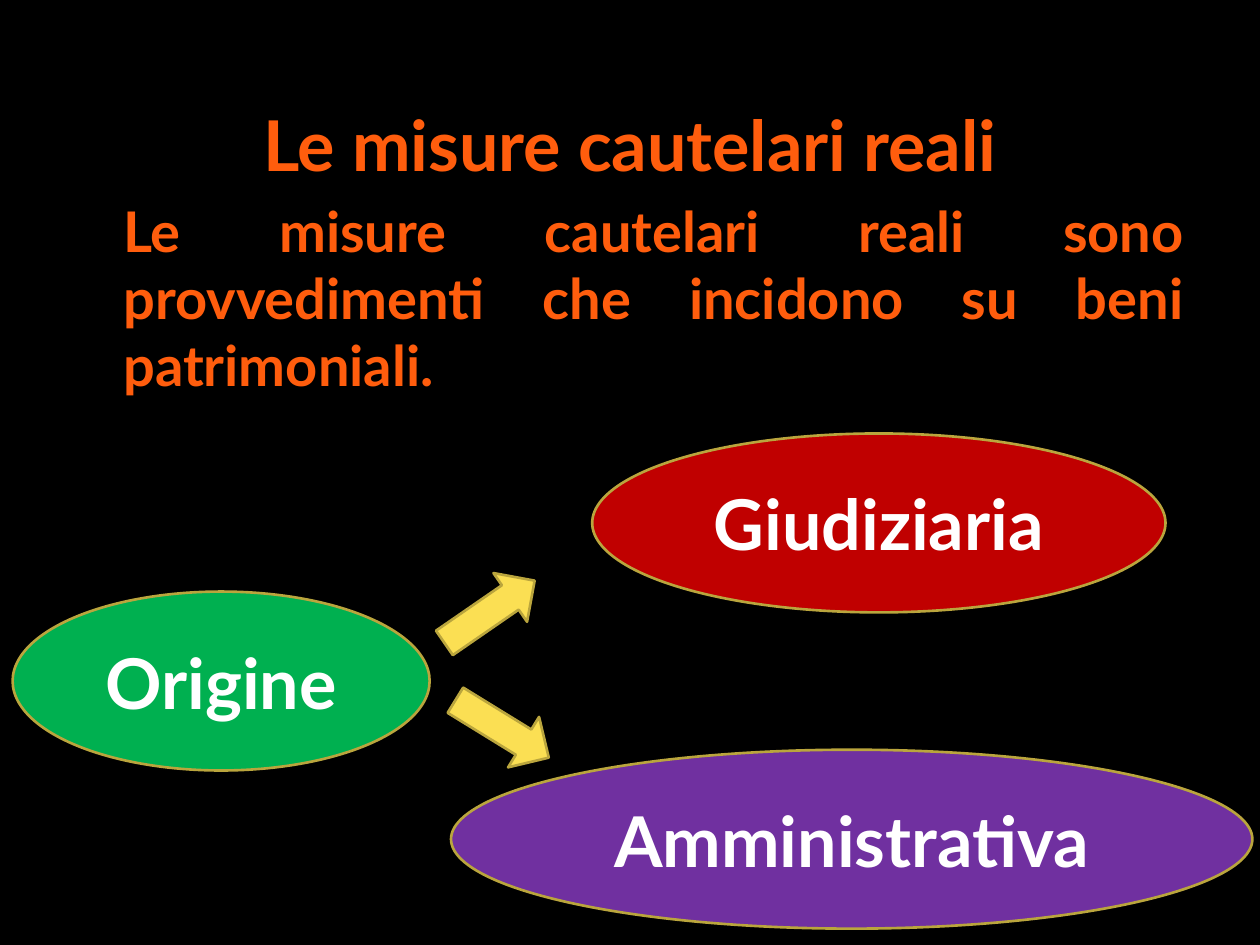
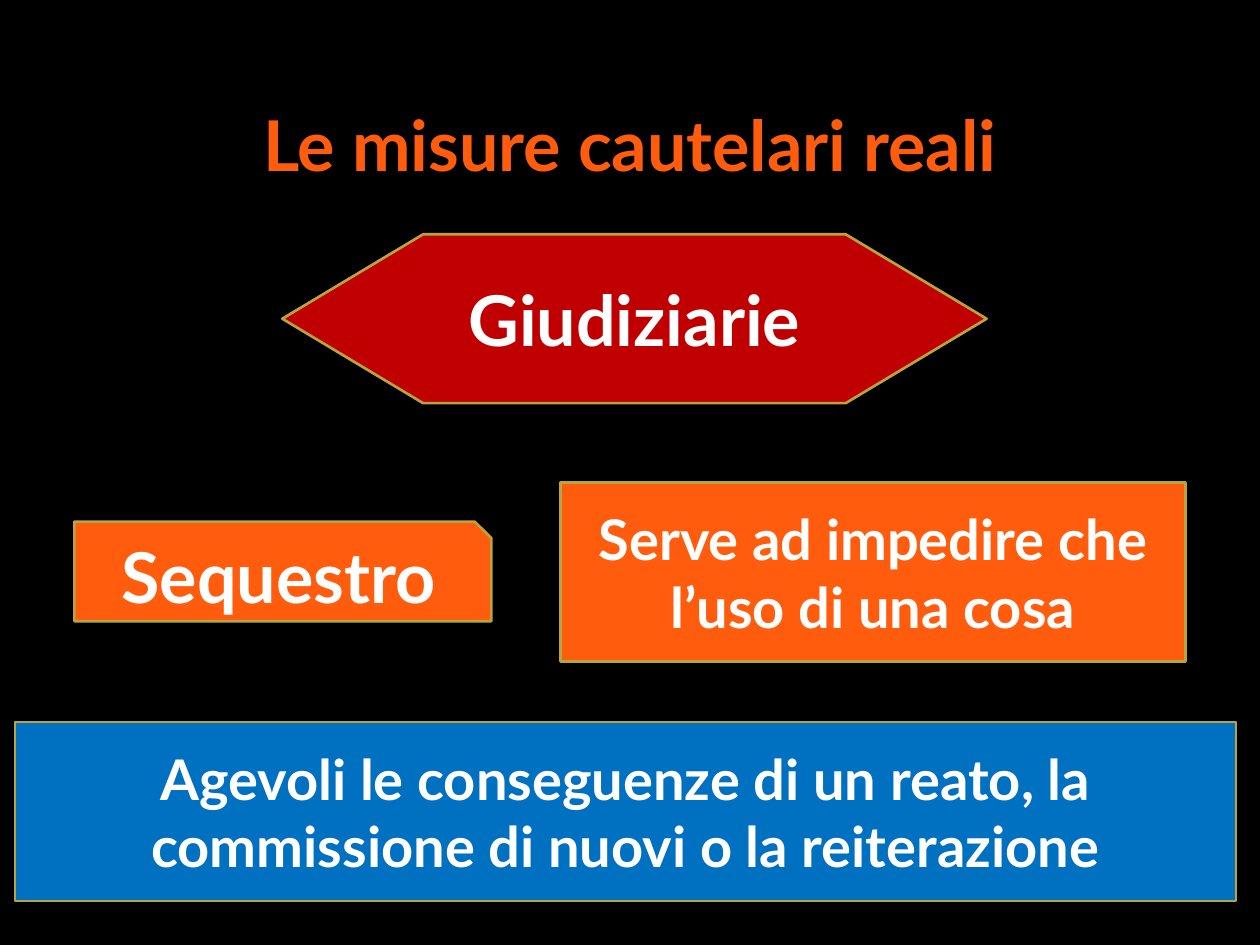
from collections import namedtuple

from pptx import Presentation
from pptx.dml.color import RGBColor
from pptx.enum.shapes import MSO_SHAPE as SHAPE
from pptx.enum.text import MSO_ANCHOR as ANCHOR, PP_ALIGN as ALIGN
from pptx.util import Inches, Pt

COLORS = {
    "black": "000000", "white": "FFFFFF", "orange": "FF5D0D",
    "gold": "BAA53D", "yellow": "FBDF53", "green": "00B050",
    "red": "C00000", "purple": "7030A0", "blue": "0070C0",
}
FONT = "Lato"
TITLE = "Le misure cautelari reali"
LARGE, MEDIUM = 40, 32

# The slide is a grid of 100 columns and 75 rows; boxes are measured in cells.
WIDTH, HEIGHT = Inches(10), Inches(7.5)
COL, ROW = WIDTH / 100, HEIGHT / 75
BLOCK_H = 14.2
Box = namedtuple("Box", "x y w h")
FULL = Box(0, 0, 100, 75)


def rgb(name):
    return RGBColor.from_string(COLORS[name])


def emu(box):
    return (round(box.x * COL), round(box.y * ROW),
            round(box.w * COL), round(box.h * ROW))


def inside(box, x, y, w, h):
    """Return a box whose offset is counted from the corner of another."""
    return Box(box.x + x, box.y + y, w, h)


def write(p, text, size=LARGE, color="white", align=ALIGN.CENTER,
          before=0, indent=0):
    p.alignment = align
    p.space_before = Pt(before)
    if indent:
        pPr = p._p.get_or_add_pPr()
        pPr.set("marL", str(Inches(indent)))
        pPr.set("indent", "0")
    r = p.add_run()
    r.text = text
    r.font.name, r.font.size, r.font.bold = FONT, Pt(size), True
    r.font.color.rgb = rgb(color)


def add_block(s, kind, box, fill, text="", size=LARGE, line="gold",
              weight=1.5, rotation=0):
    sp = s.shapes.add_shape(kind, *emu(box))
    sp.shadow.inherit = False
    sp.fill.solid()
    sp.fill.fore_color.rgb = rgb(fill)
    sp.line.color.rgb = rgb(line)
    sp.line.width = Pt(weight)
    sp.rotation = rotation
    if text:
        tf = sp.text_frame
        tf.word_wrap = True
        tf.vertical_anchor = ANCHOR.MIDDLE
        write(tf.paragraphs[0], text, size)


def add_heading(s, box, body=""):
    tf = s.shapes.add_textbox(*emu(box)).text_frame
    tf.word_wrap = True
    write(tf.paragraphs[0], TITLE, color="orange")
    if body:
        write(tf.add_paragraph(), body, MEDIUM, "orange", ALIGN.JUSTIFY,
              before=6, indent=0.38)


def add_origin_diagram(s, box):
    """One source on the left, halfway down, and arrows to two outcomes."""
    ellipses = [
        ("Origine", "green", 0, (box.h - BLOCK_H) / 2, 33.1),
        ("Giudiziaria", "red", 46, 0, 45.5),
        ("Amministrativa", "purple", box.w - 63.6, box.h - BLOCK_H, 63.6),
    ]
    for text, fill, x, y, w in ellipses:
        add_block(s, SHAPE.OVAL, inside(box, x, y, w, BLOCK_H), fill, text)
    for x, y, rotation in [(34.5, 21.1, 211.6), (33.5, 11.8, 145.4)]:
        add_block(s, SHAPE.LEFT_ARROW, inside(box, x, y, 8.7, 4.7),
                  "yellow", rotation=rotation)


def add_seizure_scheme(s, box):
    """Category on top, measure and purpose below it, effect at the foot."""
    add_block(s, SHAPE.FLOWCHART_PREPARATION, inside(box, 21.2, 0, 55.9, 13.4),
              "red", "Giudiziarie")
    add_block(s, SHAPE.SNIP_1_RECTANGLE, inside(box, 4.7, 22.8, 33.1, 7.9),
              "orange", "Sequestro")
    add_block(s, SHAPE.RECTANGLE, inside(box, 43.3, 19.7, 49.6, BLOCK_H),
              "orange", "Serve ad impedire che l’uso di una cosa", MEDIUM)
    add_block(s, SHAPE.RECTANGLE,
              inside(box, 0, box.h - BLOCK_H, box.w, BLOCK_H), "blue",
              "Agevoli le conseguenze di un reato, la commissione di nuovi "
              "o la reiterazione", MEDIUM)


def add_slide(prs, heading_rows, body=""):
    s = prs.slides.add_slide(prs.slide_layouts[6])
    add_block(s, SHAPE.RECTANGLE, FULL, "black", line="black", weight=0.75)
    add_heading(s, Box(5, 7.6, 90, heading_rows), body)
    return s


def main():
    prs = Presentation()
    prs.slide_width, prs.slide_height = WIDTH, HEIGHT
    s = add_slide(prs, 26, "Le misure cautelari reali sono provvedimenti "
                           "che incidono su beni patrimoniali.")
    add_origin_diagram(s, Box(1, 34.4, 98.4, 39.3))
    s = add_slide(prs, 10.2)
    add_seizure_scheme(s, Box(1.2, 18.6, 96.9, 52.9))
    prs.save("out.pptx")


if __name__ == "__main__":
    main()
